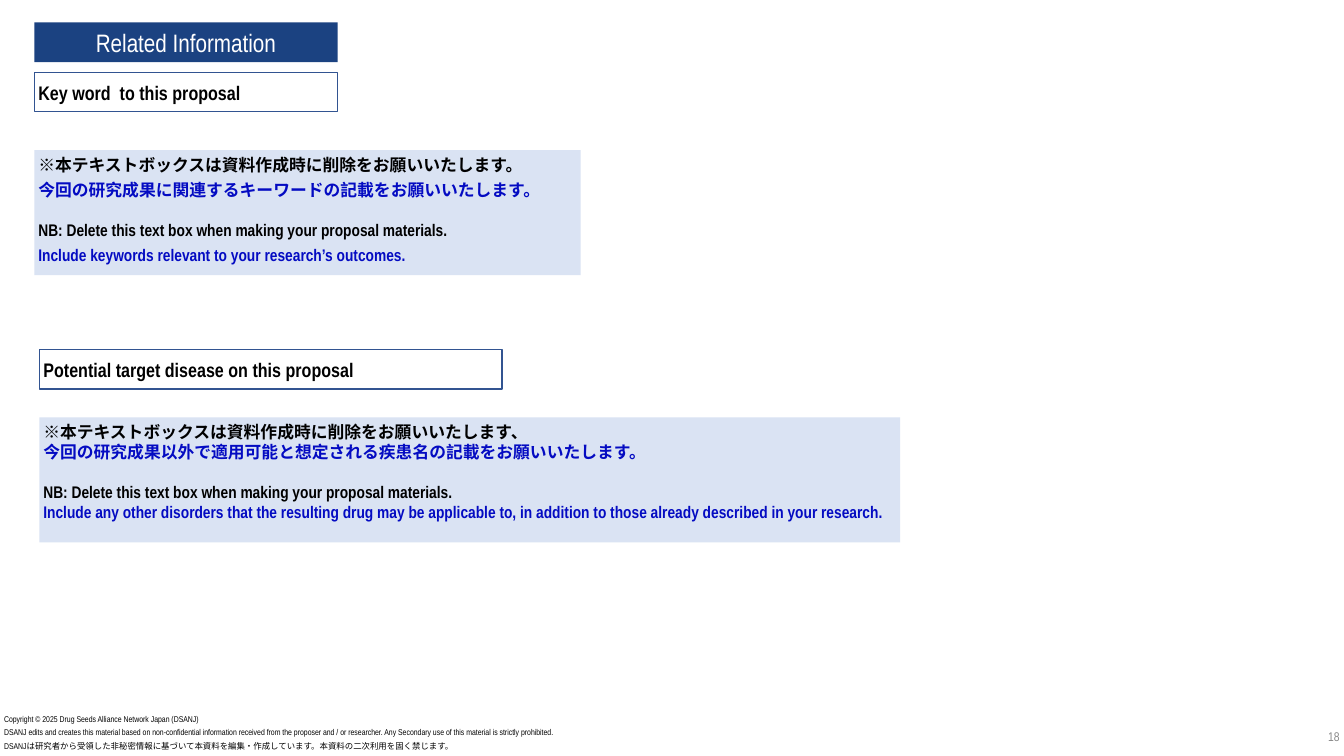
from dataclasses import dataclass

from lxml import etree
from pptx import Presentation
from pptx.dml.color import RGBColor
from pptx.enum.shapes import MSO_SHAPE
from pptx.enum.text import MSO_ANCHOR, PP_ALIGN
from pptx.oxml.ns import qn
from pptx.util import Pt

RECT = MSO_SHAPE.RECTANGLE
TOP, MIDDLE = MSO_ANCHOR.TOP, MSO_ANCHOR.MIDDLE
LEFT, CENTER, RIGHT = PP_ALIGN.LEFT, PP_ALIGN.CENTER, PP_ALIGN.RIGHT


@dataclass(frozen=True)
class Theme:
    """Colours, fonts and type sizes of the slide."""
    navy: RGBColor = RGBColor(0x1B, 0x42, 0x81)
    outline: RGBColor = RGBColor(0x32, 0x54, 0x91)
    pale: RGBColor = RGBColor(0xDA, 0xE3, 0xF3)
    blue: RGBColor = RGBColor(0x04, 0x0B, 0xC2)
    black: RGBColor = RGBColor(0, 0, 0)
    white: RGBColor = RGBColor(0xFF, 0xFF, 0xFF)
    grey: RGBColor = RGBColor(0x89, 0x89, 0x89)
    latin: str = "Arial Narrow"
    japanese: str = "Noto Sans CJK JP"
    title: float = 18
    heading: float = 14
    body: float = 12
    number: float = 9
    footer: float = 6


THEME = Theme()


def set_frame(sp, anchor):
    """Give a shape its insets, wrapping and anchor, and return its text frame."""
    tf = sp.text_frame
    tf.word_wrap = True
    tf.vertical_anchor = anchor
    tf.margin_left = tf.margin_right = tf.margin_top = tf.margin_bottom = Pt(2.88)
    return tf


def set_text(p, text, size, color, bold=False, align=LEFT, font=THEME.latin):
    """Write a paragraph and format its run."""
    p.text = text
    p.alignment = align
    r = p.runs[0]
    r.font.name = font
    r.font.size = Pt(size)
    r.font.bold = bold
    r.font.color.rgb = color
    ea = etree.Element(qn("a:ea"), typeface=THEME.japanese)
    r.font._element.find(qn("a:latin")).addnext(ea)


def add_box(slide, box, fill=None, line=None, anchor=MIDDLE):
    """Add a rectangle and return its text frame."""
    sp = slide.shapes.add_shape(RECT, *map(Pt, box))
    sp.shadow.inherit = False
    if fill is None:
        sp.fill.background()
    else:
        sp.fill.solid()
        sp.fill.fore_color.rgb = fill
    if line is None:
        sp.line.fill.background()
    else:
        sp.line.color.rgb = line
        sp.line.width = Pt(1)
    return set_frame(sp, anchor)


def add_label(slide, box, text, size, color, align=LEFT, anchor=TOP):
    """Add a text box with one line and return its paragraph."""
    p = set_frame(slide.shapes.add_textbox(*map(Pt, box)), anchor).paragraphs[0]
    set_text(p, text, size, color, align=align)
    return p


def add_title(slide, box, text):
    """Add the filled title bar."""
    tf = add_box(slide, box, fill=THEME.navy)
    set_text(tf.paragraphs[0], text, THEME.title, THEME.white, align=CENTER)


def add_section(slide, box, heading, heading_width, gap, notes, blue_leading=None):
    """Add an outlined heading with a shaded bilingual note below it."""
    left, top, width, height = box
    heading_height = 28.1
    tf = add_box(slide, (left, top, heading_width, heading_height), line=THEME.outline)
    set_text(tf.paragraphs[0], heading, THEME.heading, THEME.black, bold=True)

    note_top = heading_height + gap
    tf = add_box(slide, (left, top + note_top, width, height - note_top),
                 fill=THEME.pale, anchor=TOP)
    for i, (font, color, text) in enumerate(notes):
        p = tf.paragraphs[0] if i == 0 else tf.add_paragraph()
        set_text(p, text, THEME.body, color, bold=True, font=font)
        if color == THEME.blue and blue_leading:
            p.line_spacing = Pt(blue_leading)
        if i == 2:
            p.space_before = Pt(14.4)


def add_footer(slide, box, lines):
    """Add the copyright lines at an equal pitch."""
    left, top, width, height = box
    pitch = height / len(lines)
    for i, text in enumerate(lines):
        p = add_label(slide, (left, top + i * pitch, width, 14.4), text,
                      THEME.footer, THEME.black)
        if i:
            p.line_spacing = Pt(7.2)


def bilingual(japanese, japanese_hint, english, english_hint):
    """Pair each note line with its font and colour."""
    return [(THEME.japanese, THEME.black, japanese),
            (THEME.japanese, THEME.blue, japanese_hint),
            (THEME.latin, THEME.black, english),
            (THEME.latin, THEME.blue, english_hint)]


def main():
    """Build the slide and save it."""
    prs = Presentation()
    prs.slide_width, prs.slide_height = Pt(960), Pt(540)
    slide = prs.slides.add_slide(prs.slide_layouts[6])

    delete_note = "NB: Delete this text box when making your proposal materials."
    add_title(slide, (24.5, 16, 216.7, 28.5), "Related Information")
    add_section(slide, (24.5, 51.8, 390.2, 144.8), "Key word  to this proposal", 216.7, 27.4,
                bilingual("※本テキストボックスは資料作成時に削除をお願いいたします。",
                          "今回の研究成果に関連するキーワードの記載をお願いいたします。",
                          delete_note,
                          "Include keywords relevant to your research’s outcomes."),
                blue_leading=18)
    add_section(slide, (28.1, 249.8, 614.9, 137.6),
                "Potential target disease on this proposal", 330.5, 20.2,
                bilingual("※本テキストボックスは資料作成時に削除をお願いいたします、",
                          "今回の研究成果以外で適用可能と想定される疾患名の記載をお願いいたします。",
                          delete_note,
                          "Include any other disorders that the resulting drug may be applicable to, "
                          "in addition to those already described in your research."))
    add_footer(slide, (0, 506.9, 555.8, 29.1), [
        "Copyright © 2025 Drug Seeds Alliance Network Japan (DSANJ)",
        "DSANJ edits and creates this material based on non-confidential information received "
        "from the proposer and / or researcher. Any Secondary use of this material is strictly "
        "prohibited.",
        "DSANJは研究者から受領した非秘密情報に基づいて本資料を編集・作成しています。"
        "本資料の二次利用を固く禁じます。"])
    add_label(slide, (792, 512.6, 167.8, 26.6), "18", THEME.number, THEME.grey,
              align=RIGHT, anchor=MIDDLE)
    prs.save("out.pptx")


if __name__ == "__main__":
    main()
